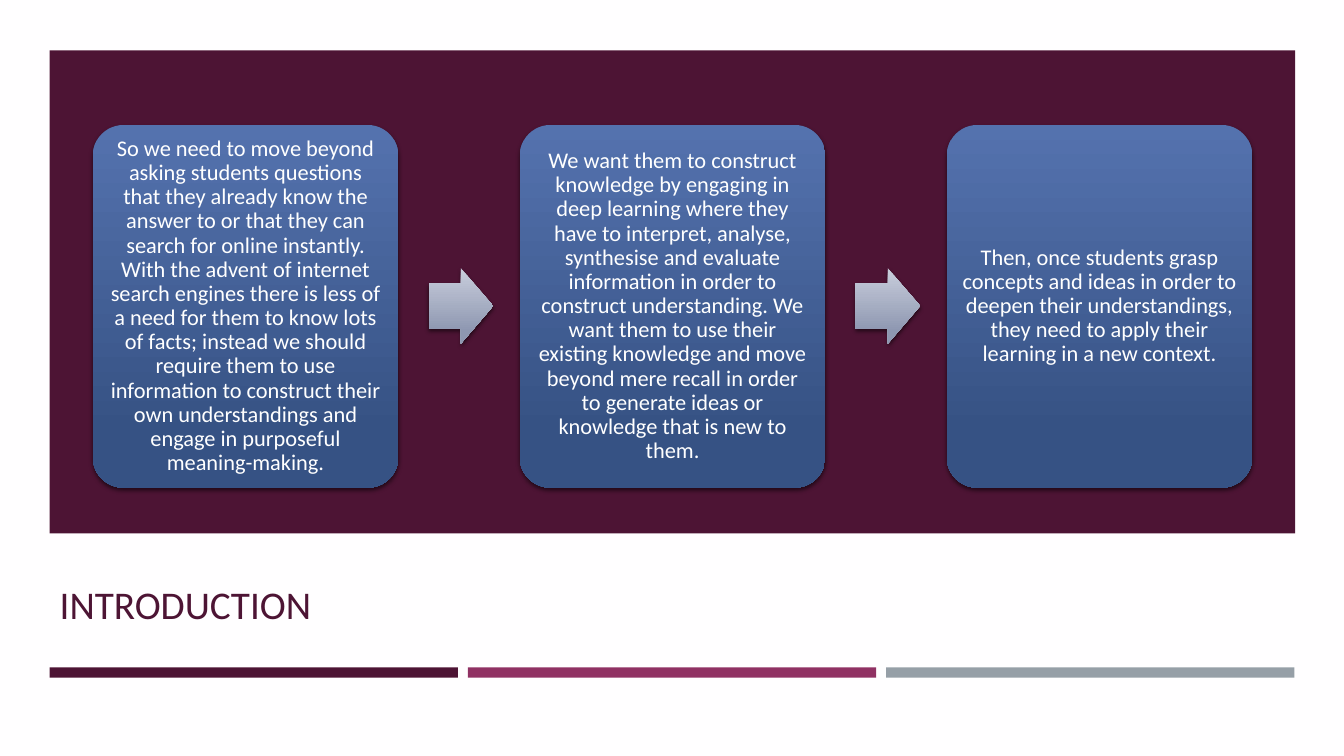
"""Build the introduction slide: three steps joined by arrows above a title."""
from lxml import etree
from pptx import Presentation
from pptx.dml.color import RGBColor
from pptx.enum.shapes import MSO_SHAPE
from pptx.enum.text import MSO_ANCHOR, MSO_AUTO_SIZE, PP_ALIGN
from pptx.oxml import parse_xml
from pptx.util import Cm, Pt

RECTANGLE = MSO_SHAPE.RECTANGLE
ROUNDED = MSO_SHAPE.ROUNDED_RECTANGLE
ARROW = MSO_SHAPE.RIGHT_ARROW
MIDDLE = MSO_ANCHOR.MIDDLE
NO_AUTOFIT = MSO_AUTO_SIZE.NONE
LEFT, CENTER = PP_ALIGN.LEFT, PP_ALIGN.CENTER
FONT = "Calibri"
COLORS = {
    "page": "FFFEFF", "plum": "4D1434", "magenta": "903163", "grey": "969FA7",
    "card_top": "5472AE", "card_bottom": "365284",
    "arrow_top": "C9CEDC", "arrow_bottom": "8E97B1", "text": "FFFFFF",
}
SHADOW = (
    '<a:outerShdw xmlns:a="http://schemas.openxmlformats.org/drawingml/2006/main" '
    'blurRad="38100" dist="25400" dir="5400000" rotWithShape="0">'
    '<a:srgbClr val="000000"><a:alpha val="55000"/></a:srgbClr></a:outerShdw>'
)
STEPS = [
    "So we need to move beyond asking students questions that they already know "
    "the answer to or that they can search for online instantly. With the advent "
    "of internet search engines there is less of a need for them to know lots of "
    "facts; instead we should require them to use information to construct their "
    "own understandings and engage in purposeful meaning-making.",
    "We want them to construct knowledge by engaging in deep learning where they "
    "have to interpret, analyse, synthesise and evaluate information in order to "
    "construct understanding. We want them to use their existing knowledge and "
    "move beyond mere recall in order to generate ideas or knowledge that is new "
    "to them.",
    "Then, once students grasp concepts and ideas in order to deepen their "
    "understandings, they need to apply their learning in a new context.",
]
STEP_PITCH = 10.76
BAR_PITCH = 10.54


def add_shape(kind, left, top, width, height, *colors):
    """Add a borderless shape; two colours give a shaded shape with a shadow."""
    shape = page.shapes.add_shape(kind, Cm(left), Cm(top), Cm(width), Cm(height))
    shape.shadow.inherit = False
    shape.line.fill.background()
    if len(colors) == 1:
        shape.fill.solid()
        shape.fill.fore_color.rgb = RGBColor.from_string(COLORS[colors[0]])
        return shape
    shape.fill.gradient()
    shape.fill.gradient_angle = 270
    for stop, color, position in zip(shape.fill.gradient_stops, colors, (0, 0.84)):
        stop.color.rgb = RGBColor.from_string(COLORS[color])
        stop.position = position
    shape._element.spPr.find("{*}effectLst").append(parse_xml(SHADOW))
    return shape


def format_text(frame, size, color, alignment):
    """Set the frame's anchor and wrapping and its paragraph's font."""
    frame.word_wrap = True
    frame.auto_size = NO_AUTOFIT
    frame.vertical_anchor = MIDDLE
    para = frame.paragraphs[0]
    para.alignment = alignment
    para.font.name = FONT
    para.font.size = Pt(size)
    para.font.color.rgb = RGBColor.from_string(COLORS[color])
    return para


deck = Presentation()
deck.slide_width, deck.slide_height = Cm(33.87), Cm(19.05)
page = deck.slides.add_slide(deck.slide_layouts[5])
page.background.fill.solid()
page.background.fill.fore_color.rgb = RGBColor.from_string(COLORS["page"])

title = page.shapes.title
title.left, title.top, title.width, title.height = Cm(1.25), Cm(13.89), Cm(31.37), Cm(2.64)
title.text_frame.text = "INTRODUCTION"
format_text(title.text_frame, 28, "plum", LEFT)

add_shape(RECTANGLE, 1.25, 1.27, 31.39, 12.17, "plum")
for index, color in enumerate(("plum", "magenta", "grey")):
    add_shape(RECTANGLE, 1.25 + index * BAR_PITCH, 16.82, 10.29, 0.26, color)

for index, step in enumerate(STEPS):
    offset = index * STEP_PITCH
    card = add_shape(ROUNDED, 2.34 + offset, 3.15, 7.7, 9.14, "card_top", "card_bottom")
    card.adjustments[0] = 0.1
    frame = card.text_frame
    frame.text = step
    frame.margin_left = frame.margin_right = Cm(0.17)
    frame.margin_top = frame.margin_bottom = Cm(0.17)
    format_text(frame, 16, "text", CENTER).line_spacing = 0.9
    if index < len(STEPS) - 1:
        arrow = add_shape(ARROW, 10.8 + offset, 6.76, 1.63, 1.9, "arrow_top", "arrow_bottom")
        arrow.adjustments[0] = 0.6
        arrow.adjustments[1] = 0.5

deck.save("out.pptx")
